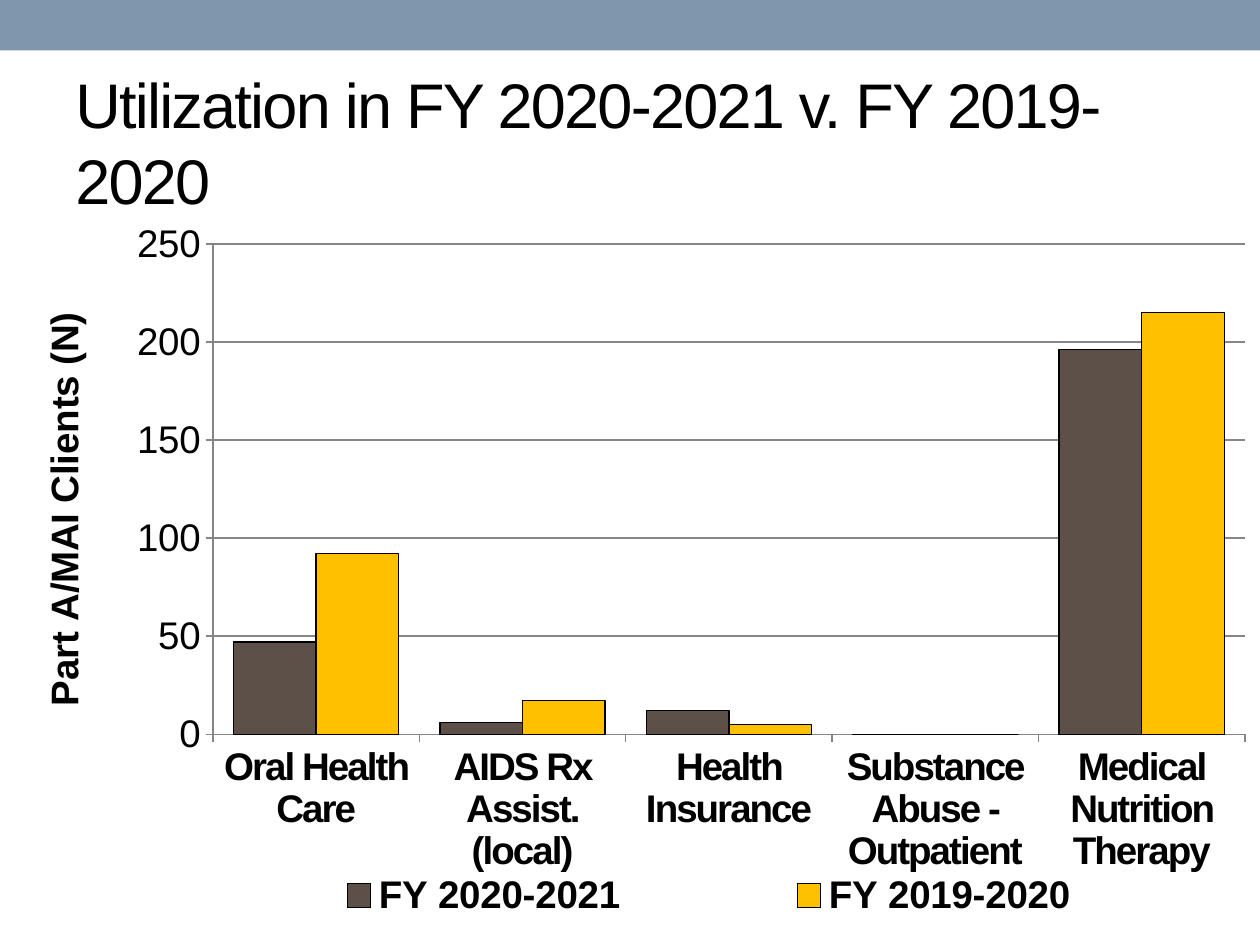
from lxml import etree
from pptx import Presentation
from pptx.chart.data import CategoryChartData
from pptx.dml.color import RGBColor
from pptx.enum import chart as ch, shapes, text
from pptx.oxml import ns
from pptx.util import Pt

BAND = RGBColor(0x7E, 0x97, 0xAD)
BLACK = RGBColor(0, 0, 0)
GRAY = RGBColor(0x86, 0x86, 0x86)
BROWN = RGBColor(0x5C, 0x50, 0x48)
GOLD = RGBColor(0xFF, 0xC0, 0x00)
FONT = "Arial"


def style(font, size, bold=False):
    font.name, font.size, font.bold = FONT, Pt(size), bold
    font.color.rgb = BLACK


def place(element, before, inner=False, **fractions):
    """Set a manual layout, in fractions of the chart, ahead of the given tags."""
    for old in element.findall(ns.qn("c:layout")):
        element.remove(old)
    layout = etree.Element(ns.qn("c:layout"))
    manual = etree.SubElement(layout, ns.qn("c:manualLayout"))
    if inner:
        etree.SubElement(manual, ns.qn("c:layoutTarget")).set("val", "inner")
    for side in ("x", "y"):
        etree.SubElement(manual, ns.qn(f"c:{side}Mode")).set("val", "edge")
    for side, value in fractions.items():
        etree.SubElement(manual, ns.qn(f"c:{side}")).set("val", str(value))
    follower = next(child for child in element
                    if child.tag in [ns.qn(tag) for tag in before])
    follower.addprevious(layout)


prs = Presentation()
prs.slide_width, prs.slide_height = Pt(720), Pt(540)
slide = prs.slides.add_slide(prs.slide_layouts[6])

# Top band
band = slide.shapes.add_shape(shapes.MSO_SHAPE.RECTANGLE, 0, 0, Pt(720), Pt(28.8))
band.shadow.inherit = False
band.fill.solid()
band.fill.fore_color.rgb = BAND
band.line.fill.background()

# Title
title = slide.shapes.add_textbox(Pt(36), Pt(41.76), Pt(648), Pt(77.76)).text_frame
title.word_wrap = True
title.vertical_anchor = text.MSO_ANCHOR.MIDDLE
heading = title.paragraphs[0]
heading_run = heading.add_run()
heading_run.text = "Utilization in FY 2020-2021 v. FY 2019-2020"
style(heading.font, 36)
heading_run.font._element.set("spc", "-100")

# Utilization chart
data = CategoryChartData()
data.categories = ["Oral Health Care", "AIDS Rx Assist. (local)", "Health Insurance",
                   "Substance Abuse - Outpatient", "Medical Nutrition Therapy"]
data.add_series("FY 2020-2021", (47, 6, 12, 0, 196))
data.add_series("FY 2019-2020", (92, 17, 5, 0, 215))
chart = slide.shapes.add_chart(ch.XL_CHART_TYPE.COLUMN_CLUSTERED, Pt(4.32), Pt(126),
                               Pt(715.68), Pt(406.08), data).chart
chart.has_title = False
style(chart.font, 22)
place(chart._chartSpace.chart.plotArea, ["c:barChart"], inner=True,
      x=0.164, y=0.033, w=0.824, h=0.69)

# Columns
columns = chart.plots[0]
columns.gap_width, columns.overlap = 50, 0
columns.vary_by_categories = False
for year, color in zip(columns.series, (BROWN, GOLD)):
    year.format.fill.solid()
    year.format.fill.fore_color.rgb = color
    year.format.line.color.rgb = BLACK
    year.format.line.width = Pt(0.75)

# Axes
services, clients = chart.category_axis, chart.value_axis
for axis in (services, clients):
    axis.major_tick_mark = ch.XL_TICK_MARK.OUTSIDE
    axis.minor_tick_mark = ch.XL_TICK_MARK.NONE
    axis.format.line.color.rgb = GRAY
    axis.format.line.width = Pt(0.75)
style(services.tick_labels.font, 22, bold=True)
services.tick_labels.font._element.set("spc", "-100")
style(clients.tick_labels.font, 22)
clients.tick_labels.number_format = "#,##0"
clients.tick_labels.number_format_is_linked = False
clients.minimum_scale, clients.maximum_scale, clients.major_unit = 0, 250, 50
clients.has_major_gridlines = True
clients.major_gridlines.format.line.color.rgb = GRAY
clients.major_gridlines.format.line.width = Pt(0.75)
clients_title = clients.axis_title
clients_title.text_frame.text = "Part A/MAI Clients (N)"
style(clients_title.text_frame.paragraphs[0].font, 22, bold=True)
place(clients_title._element, ["c:overlay"], x=0.02, y=0.12)

# Legend
chart.has_legend = True
legend = chart.legend
legend.position = ch.XL_LEGEND_POSITION.BOTTOM
legend.include_in_layout = False
style(legend.font, 22, bold=True)
place(legend._element, ["c:overlay"], x=0.14, y=0.91, w=0.84, h=0.08)

prs.save("out.pptx")
